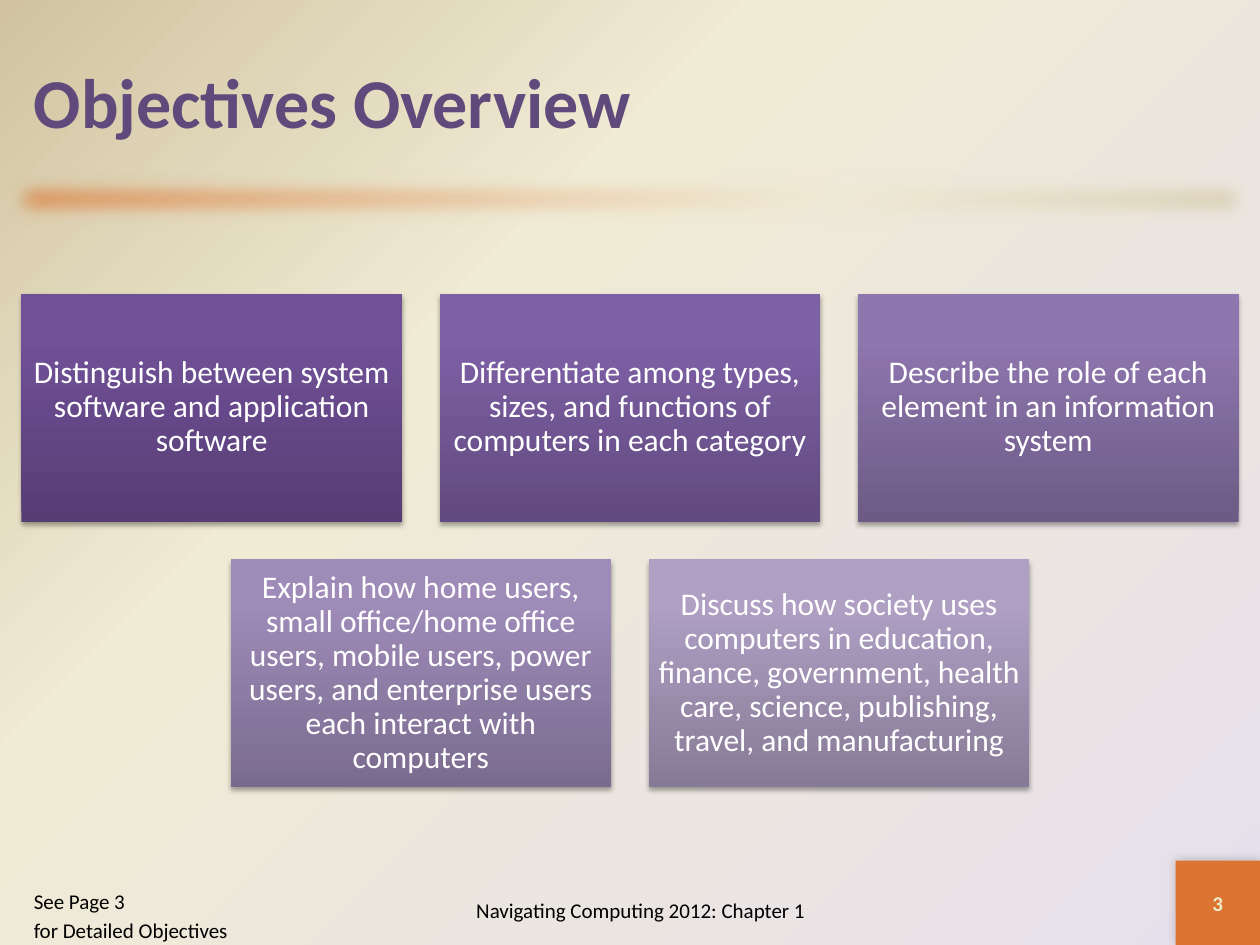
from lxml import etree
from pptx import Presentation
from pptx import util as u
from pptx.dml.color import RGBColor
from pptx.enum import shapes, text
from pptx.oxml.ns import qn

WIDTH, HEIGHT = 10, 7.5
CARD_W, CARD_H, GAP, CARDS_TOP = 3.02, 1.81, 0.3, 2.33
MARGIN, CORNER = 0.17, 0.67
FONT = "Calibri"

PURPLE = RGBColor(0x60, 0x4A, 0x7B)
ORANGE = RGBColor(0xDB, 0x75, 0x31)
LILAC = RGBColor(0xE6, 0xE0, 0xEC)
CREAM = RGBColor(0xF0, 0xEB, 0xD5)
TAN = RGBColor(0xD1, 0xC3, 0x9F)
PALE = RGBColor(0xEE, 0xEB, 0xCA)
WHITE = RGBColor(0xFF, 0xFF, 0xFF)
BLACK = RGBColor(0x00, 0x00, 0x00)

BACKGROUND = [(0, LILAC), (65, CREAM), (100, TAN)]
BAND = [(0, ORANGE), (65, CREAM), (100, TAN)]
SHADES = [
    (RGBColor(0x56, 0x3D, 0x74), RGBColor(0x70, 0x50, 0x97), RGBColor(0x70, 0x4F, 0x99)),
    (RGBColor(0x61, 0x4A, 0x7F), RGBColor(0x7E, 0x60, 0xA5), RGBColor(0x7F, 0x60, 0xA7)),
    (RGBColor(0x6D, 0x5B, 0x86), RGBColor(0x8E, 0x76, 0xAE), RGBColor(0x8E, 0x75, 0xB0)),
    (RGBColor(0x79, 0x6B, 0x8E), RGBColor(0x9E, 0x8B, 0xB8), RGBColor(0x9E, 0x8B, 0xBA)),
    (RGBColor(0x86, 0x7B, 0x96), RGBColor(0xAE, 0x9F, 0xC3), RGBColor(0xAE, 0x9F, 0xC4)),
]
ROWS = [
    ["Distinguish between system software and application software",
     "Differentiate among types, sizes, and functions of computers in each category",
     "Describe the role of each element in an information system"],
    ["Explain how home users, small office/home office users, mobile users, "
     "power users, and enterprise users each interact with computers",
     "Discuss how society uses computers in education, finance, government, "
     "health care, science, publishing, travel, and manufacturing"],
]


def add(parent, tag, **attrs):
    """Append a DrawingML child with the given attributes."""
    return etree.SubElement(parent, qn(tag), {k: str(v) for k, v in attrs.items()})


def gradient(parent, stops, angle=None):
    """Append a linear gradient, or a circular one from the lower right corner."""
    grad = add(parent, "a:gradFill", rotWithShape=1)
    gs_list = add(grad, "a:gsLst")
    for pos, color in stops:
        add(add(gs_list, "a:gs", pos=pos * 1000), "a:srgbClr", val=color)
    if angle is None:
        circle = add(grad, "a:path", path="circle")
        add(circle, "a:fillToRect", l=100000, t=100000)
    else:
        add(grad, "a:lin", ang=angle * 60000, scaled=0)
    return grad


def shadow(sp, alpha, blur, dist, direction):
    """Give a shape a black outer shadow, lengths in points."""
    effects = add(sp.element.spPr, "a:effectLst")
    outer = add(effects, "a:outerShdw", blurRad=u.Pt(blur), dist=u.Pt(dist),
                dir=direction * 60000, algn="ctr", rotWithShape=0)
    add(add(outer, "a:srgbClr", val=BLACK), "a:alpha", val=alpha * 1000)


def rect(s, left, top, width, height):
    """Add a rectangle without an outline."""
    sp = s.shapes.add_shape(shapes.MSO_SHAPE.RECTANGLE, *map(u.Inches, (left, top, width, height)))
    sp.line.fill.background()
    return sp


def write(sp, lines, size, color, bold=False, align=text.PP_ALIGN.CENTER,
          anchor=text.MSO_ANCHOR.MIDDLE):
    """Write one paragraph per line and return the text frame."""
    tf = sp.text_frame
    tf.word_wrap = True
    tf.vertical_anchor = anchor
    for i, line in enumerate(lines):
        p = tf.paragraphs[0] if i == 0 else tf.add_paragraph()
        p.text = line
        p.alignment = align
        p.font.name, p.font.size = FONT, u.Pt(size)
        p.font.color.rgb, p.font.bold = color, bold
        if i:
            p.space_before = u.Pt(size * 0.2)
    return tf


def label(s, box, lines, size, color, **style):
    """Add a text box."""
    write(s.shapes.add_textbox(*map(u.Inches, box)), lines, size, color, **style)


def background(s):
    """Fill the slide with the circular gradient."""
    s.background.fill.solid()
    bg = s.element.find(".//" + qn("p:bgPr"))
    bg.replace(bg[0], gradient(bg, BACKGROUND))


def band(s):
    """Add the soft-edged band below the title."""
    sp = rect(s, 0, 1.33, WIDTH, 0.5)
    gradient(sp.element.spPr, BAND, 45)
    sp.element.spPr.append(sp.element.spPr.find(qn("a:ln")))
    add(add(sp.element.spPr, "a:effectLst"), "a:softEdge", rad=u.Pt(12.5))


def card(s, left, top, content, shades):
    """Add one objective card."""
    sp = rect(s, left, top, CARD_W, CARD_H)
    gradient(sp.element.spPr, zip((0, 80, 100), shades), 270)
    sp.element.spPr.append(sp.element.spPr.find(qn("a:ln")))
    shadow(sp, 35, 3.1, 1.8, 90)
    tf = write(sp, [content], 18, WHITE)
    tf.margin_left = tf.margin_right = tf.margin_top = tf.margin_bottom = u.Inches(0.07)
    tf.paragraphs[0].line_spacing = 0.9


def cards(s):
    """Lay out the cards in centred rows."""
    shades = iter(SHADES)
    for row, contents in enumerate(ROWS):
        n = len(contents)
        left = (WIDTH - n * CARD_W - (n - 1) * GAP) / 2
        for col, content in enumerate(contents):
            card(s, left + col * (CARD_W + GAP), CARDS_TOP + row * (CARD_H + GAP),
                 content, next(shades))


def page_number(s, number):
    """Add the corner square with the page number."""
    sp = rect(s, WIDTH - CORNER, HEIGHT - CORNER, CORNER, CORNER)
    sp.fill.solid()
    sp.fill.fore_color.rgb = ORANGE
    shadow(sp, 20, 6, 0, 225)
    write(sp, [number], 12, PALE, bold=True)


def main():
    """Build the slide and save it."""
    prs = Presentation()
    prs.slide_width, prs.slide_height = u.Inches(WIDTH), u.Inches(HEIGHT)
    s = prs.slides.add_slide(prs.slide_layouts[6])
    background(s)
    band(s)
    label(s, (MARGIN, MARGIN, WIDTH - 2 * MARGIN, 1.25), ["Objectives Overview"], 40, PURPLE,
          bold=True, align=text.PP_ALIGN.LEFT)
    cards(s)
    label(s, (3, 6.95, 4.17, 0.55), ["Navigating Computing 2012: Chapter 1"], 12, BLACK)
    page_number(s, "3")
    label(s, (MARGIN, 7, 1.83, 0.5), ["See Page 3", "for Detailed Objectives"], 12, BLACK,
          align=text.PP_ALIGN.LEFT, anchor=text.MSO_ANCHOR.TOP)
    prs.save("out.pptx")


if __name__ == "__main__":
    main()
